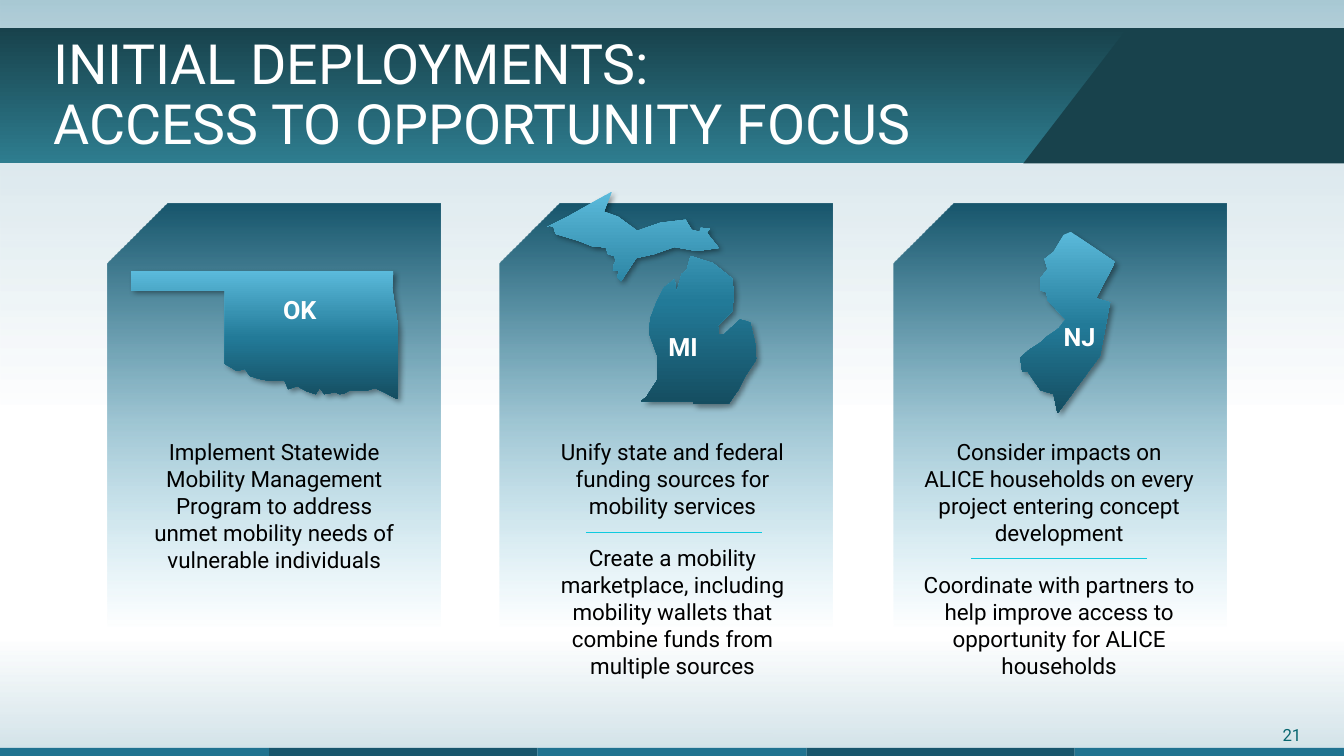
from dataclasses import dataclass
from typing import NamedTuple

from lxml import etree
from pptx import Presentation
from pptx.dml.color import RGBColor
from pptx.enum.shapes import MSO_CONNECTOR, MSO_SHAPE
from pptx.enum.text import MSO_ANCHOR, MSO_AUTO_SIZE, PP_ALIGN
from pptx.oxml.ns import qn
from pptx.util import Pt

SCALE = 9144
SLIDE_WIDTH, SLIDE_HEIGHT = 1333, 750
FONT = "Roboto"
DOWNWARD, UPWARD = 270, 90
RECTANGLE = MSO_SHAPE.RECTANGLE
SNIPPED = MSO_SHAPE.SNIP_2_DIAG_RECTANGLE
STRAIGHT = MSO_CONNECTOR.STRAIGHT
LEFT, CENTER = PP_ALIGN.LEFT, PP_ALIGN.CENTER
TOP, MIDDLE = MSO_ANCHOR.TOP, MSO_ANCHOR.MIDDLE
GROW, FIXED = MSO_AUTO_SIZE.SHAPE_TO_FIT_TEXT, MSO_AUTO_SIZE.NONE

WHITE = RGBColor(0xFF, 0xFF, 0xFF)
BLACK = RGBColor(0x00, 0x00, 0x00)
BLUE = RGBColor(0x20, 0x73, 0x90)
DARK_BLUE = RGBColor(0x18, 0x56, 0x6C)
SKY = RGBColor(0x5B, 0xBA, 0xDB)
STATE_MIDDLE = RGBColor(0x22, 0x7A, 0x98)
STATE_DARK = RGBColor(0x15, 0x4D, 0x60)
HEADER_DARK = RGBColor(0x18, 0x42, 0x4C)
HEADER_LIGHT = RGBColor(0x2E, 0x7D, 0x8F)
NUMBER_TEAL = RGBColor(0x08, 0x66, 0x70)
CYAN = RGBColor(0x0F, 0xCB, 0xDF)


class Box(NamedTuple):
    left: int
    top: int
    width: int
    height: int


class Stop(NamedTuple):
    position: int
    color: RGBColor
    opacity: int = 100


Contour = list[tuple[int, int]]
Fill = RGBColor | list[Stop]


@dataclass
class StateCard:
    left: int
    state: str
    label: Box
    body: Box
    paragraphs: list[str]
    contours: list[Contour]
    divider: tuple[int, int] | None = None


TOP_GLOW = [Stop(0, BLUE, 0), Stop(71, BLUE, 18), Stop(100, BLUE, 39)]
BOTTOM_GLOW = [Stop(0, BLUE, 0), Stop(88, BLUE, 18), Stop(100, BLUE, 22)]
HEADER_FILL = [Stop(0, HEADER_DARK), Stop(100, HEADER_LIGHT)]
CARD_FILL = [Stop(0, DARK_BLUE), Stop(80, SKY, 0)]
STATE_FILL = [Stop(0, SKY), Stop(52, STATE_MIDDLE), Stop(100, STATE_DARK)]

HEADER_CORNER = [(1118, 28), (1333, 28), (1333, 162), (1015, 162)]
OKLAHOMA = [
    (389, 286), (395, 326), (395, 363), (394, 396), (381, 389), (372, 385), (365, 387),
    (347, 387), (342, 390), (337, 391), (332, 389), (322, 391), (317, 385), (313, 391),
    (304, 388), (295, 383), (286, 386), (282, 377), (268, 378), (258, 376), (248, 373),
    (243, 366), (235, 368), (230, 365), (223, 361), (223, 288), (130, 288), (130, 269),
    (390, 269),
]
UPPER_MICHIGAN = [
    (695, 226), (704, 227), (701, 231), (713, 246), (691, 249), (669, 245), (649, 252),
    (631, 256), (616, 279), (612, 275), (614, 269), (608, 268), (609, 262), (611, 259),
    (609, 254), (603, 252), (601, 246), (596, 245), (589, 245), (574, 239), (551, 232),
    (549, 225), (545, 224), (543, 225), (563, 215), (584, 203), (607, 190), (599, 210),
    (613, 215), (632, 229), (655, 221), (680, 218), (686, 228), (694, 230),
]
LOWER_MICHIGAN = [
    (751, 355), (738, 375), (732, 387), (723, 400), (713, 401), (688, 401), (688, 398),
    (636, 398), (641, 394), (652, 377), (652, 353), (644, 331), (645, 316), (652, 298),
    (658, 286), (669, 277), (671, 290), (676, 272), (681, 268), (685, 254), (707, 261),
    (726, 276), (728, 292), (726, 309), (712, 323), (713, 332), (718, 332), (734, 317),
    (744, 320), (749, 341), (750, 356),
]
NEW_JERSEY = [
    (1106, 260), (1087, 296), (1101, 300), (1091, 353), (1049, 410), (1045, 391),
    (1032, 387), (1019, 368), (1014, 369), (1012, 355), (1021, 347), (1032, 340),
    (1037, 335), (1050, 326), (1057, 317), (1039, 298), (1038, 290), (1032, 288),
    (1032, 276), (1039, 267), (1036, 257), (1045, 250), (1055, 233), (1062, 230),
]

CARDS = [
    StateCard(107, "OK", Box(271, 287, 74, 40), Box(143, 430, 258, 145), [
        "Implement Statewide Mobility Management Program to address unmet mobility "
        "needs of vulnerable individuals",
    ], [OKLAHOMA]),
    StateCard(496, "MI", Box(653, 324, 58, 40), Box(526, 430, 282, 251), [
        "Unify state and federal funding sources for mobility services",
        "Create a mobility marketplace, including mobility wallets that combine funds "
        "from multiple sources",
    ], [UPPER_MICHIGAN, LOWER_MICHIGAN], (581, 528)),
    StateCard(886, "NJ", Box(1045, 314, 62, 40), Box(906, 430, 289, 251), [
        "Consider impacts on\nALICE households on every project entering concept development",
        "Coordinate with partners to help improve access to opportunity for ALICE households",
    ], [NEW_JERSEY], (963, 554)),
]


def emu(*lengths: int) -> list[int]:
    return [length * SCALE for length in lengths]


def paint(shape, fill: Fill, angle: int = DOWNWARD) -> None:
    shape.shadow.inherit = False
    shape.line.fill.background()
    if isinstance(fill, RGBColor):
        shape.fill.solid()
        shape.fill.fore_color.rgb = fill
        return
    shape.fill.gradient()
    shape.fill.gradient_angle = angle
    stop_list = next(shape._element.spPr.iter(qn("a:gsLst")))
    for default_stop in list(stop_list):
        stop_list.remove(default_stop)
    for stop in fill:
        element = etree.SubElement(stop_list, qn("a:gs"), pos=str(stop.position * 1000))
        color = etree.SubElement(element, qn("a:srgbClr"), val=str(stop.color))
        etree.SubElement(color, qn("a:alpha"), val=str(stop.opacity * 1000))


def add_block(slide, box: Box, fill: Fill, kind=RECTANGLE, angle: int = DOWNWARD):
    shape = slide.shapes.add_shape(kind, *emu(*box))
    paint(shape, fill, angle)
    return shape


def add_outline(slide, contours: list[Contour], fill: Fill):
    builder = slide.shapes.build_freeform(*contours[0][0], scale=SCALE)
    builder.add_line_segments(contours[0][1:], close=True)
    for contour in contours[1:]:
        builder.move_to(*contour[0])
        builder.add_line_segments(contour[1:], close=True)
    shape = builder.convert_to_shape()
    paint(shape, fill)
    return shape


def add_drop_shadow(shape) -> None:
    effects = shape._element.spPr.find(qn("a:effectLst"))
    shadow = etree.SubElement(effects, qn("a:outerShdw"), blurRad=str(Pt(4)),
                              dist=str(Pt(3)), dir="2700000", algn="tl", rotWithShape="0")
    color = etree.SubElement(shadow, qn("a:srgbClr"), val=str(BLACK))
    etree.SubElement(color, qn("a:alpha"), val="40000")


def add_text(slide, box: Box, paragraphs: list[str], *, size: float, color: RGBColor,
             bold: bool = False, align=LEFT, anchor=TOP, wrap: bool = True,
             auto_size=GROW, space_after: int = 0, line_spacing: float = 1.0) -> None:
    frame = slide.shapes.add_textbox(*emu(*box)).text_frame
    frame.word_wrap, frame.auto_size, frame.vertical_anchor = wrap, auto_size, anchor
    for index, text in enumerate(paragraphs):
        paragraph = frame.add_paragraph() if index else frame.paragraphs[0]
        paragraph.text = text
        paragraph.alignment = align
        paragraph.space_after = Pt(space_after)
        paragraph.line_spacing = line_spacing
        for run in paragraph.runs:
            run.font.name, run.font.size, run.font.bold = FONT, Pt(size), bold
            run.font.color.rgb = color


def add_divider(slide, left: int, top: int, length: int = 175) -> None:
    connector = slide.shapes.add_connector(STRAIGHT, *emu(left, top, left + length, top))
    connector.line.color.rgb = CYAN
    connector.line.width = Pt(1)
    etree.SubElement(connector._element.spPr, qn("a:effectLst"))


def add_card(slide, card: StateCard) -> None:
    panel = add_block(slide, Box(card.left, 202, 330, 526), CARD_FILL, SNIPPED)
    panel.adjustments[0], panel.adjustments[1] = 0.18, 0
    add_drop_shadow(add_outline(slide, card.contours, STATE_FILL))
    add_text(slide, card.label, [card.state], size=18, color=WHITE, bold=True, wrap=False)
    add_text(slide, card.body, card.paragraphs, size=16, color=BLACK, align=CENTER,
             space_after=18)
    if card.divider:
        add_divider(slide, *card.divider)


def main() -> None:
    presentation = Presentation()
    presentation.slide_width, presentation.slide_height = emu(SLIDE_WIDTH, SLIDE_HEIGHT)
    slide = presentation.slides.add_slide(presentation.slide_layouts[6])
    add_block(slide, Box(0, 635, SLIDE_WIDTH, 115), BOTTOM_GLOW)
    add_block(slide, Box(0, 0, SLIDE_WIDTH, 404), TOP_GLOW, angle=UPWARD)
    add_block(slide, Box(0, 28, SLIDE_WIDTH, 134), HEADER_FILL)
    add_outline(slide, [HEADER_CORNER], HEADER_DARK)
    add_text(slide, Box(1230, 714, 103, 30), ["21"], size=12, color=NUMBER_TEAL, align=CENTER)
    edges = [round(SLIDE_WIDTH * index / 5) for index in range(6)]
    for index, (start, end) in enumerate(zip(edges, edges[1:])):
        add_block(slide, Box(start, 742, end - start, 8), DARK_BLUE if index % 2 else BLUE)
    add_text(slide, Box(43, 31, 1242, 130),
             ["INITIAL DEPLOYMENTS:\nACCESS TO OPPORTUNITY FOCUS"], size=39.6, color=WHITE,
             anchor=MIDDLE, auto_size=FIXED, line_spacing=0.9)
    for card in CARDS:
        add_card(slide, card)
    presentation.save("out.pptx")


if __name__ == "__main__":
    main()
